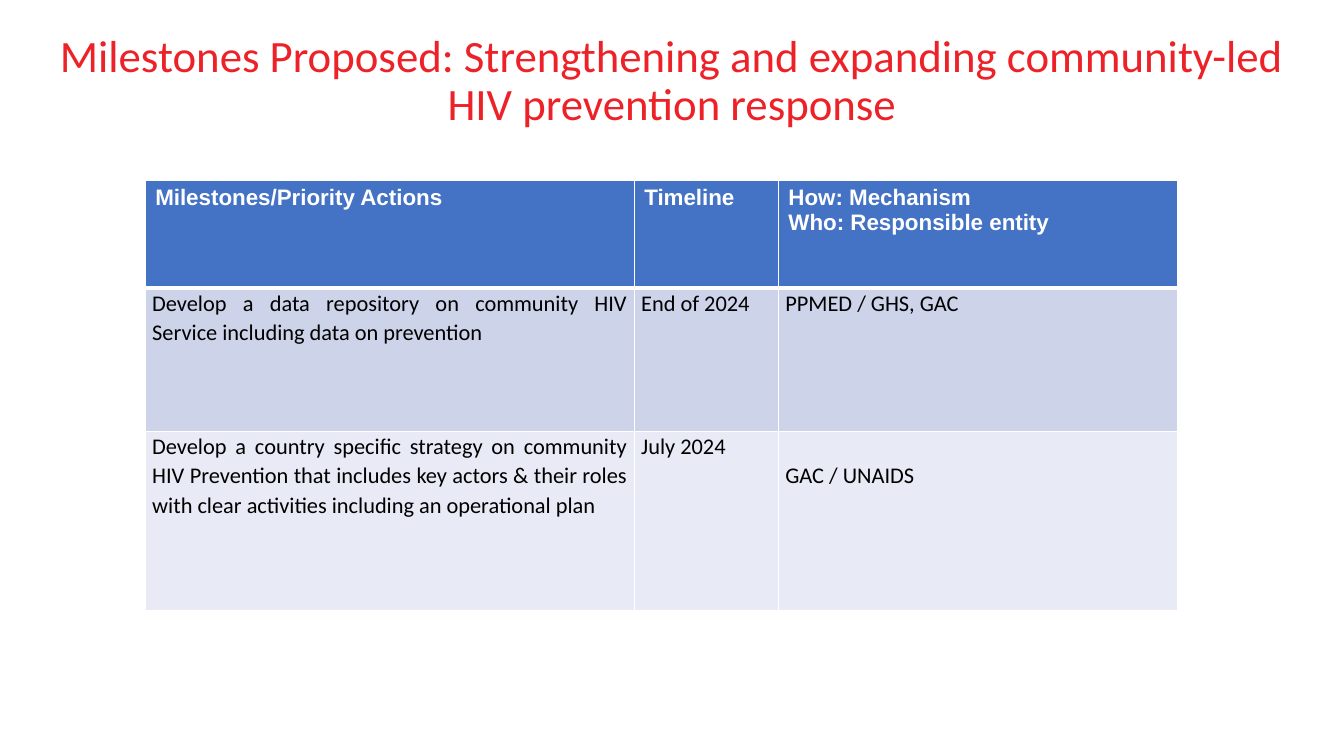
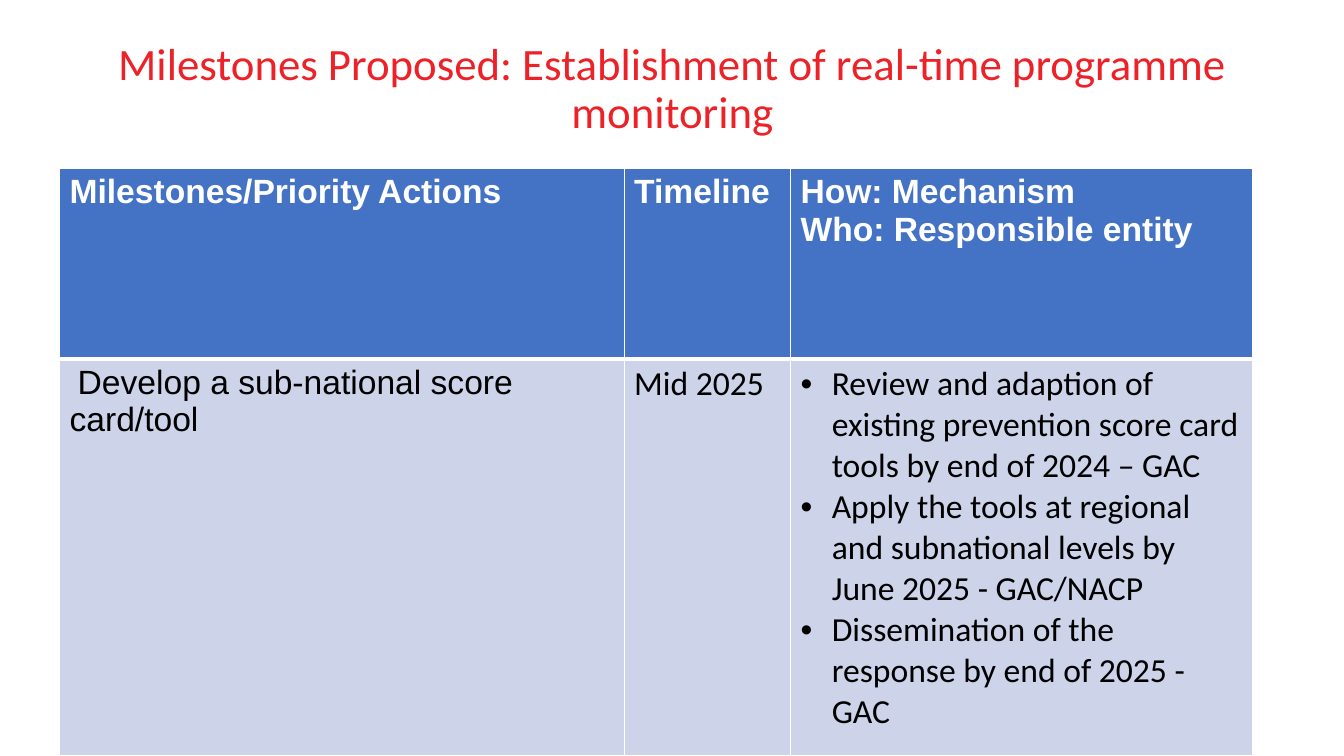
import pptx
import pptx.util
import pptx.dml.color
import pptx.enum.text
import pptx.oxml.ns
from lxml import etree

Inches, Pt = pptx.util.Inches, pptx.util.Pt
ALIGN = pptx.enum.text.PP_ALIGN

COLOURS = {
    "title": "ED2228",
    "header": "4472C4",
    "header_text": "FFFFFF",
    "body_text": "000000",
    "border": "FFFFFF",
    "bands": ["CDD4EA", "E8EBF5"],
}
HEADINGS = [
    ["Milestones/Priority Actions"],
    ["Timeline"],
    ["How: Mechanism", "Who: Responsible entity"],
]
HEADER_MARGINS = (0.1, 0.05)
BULLET_INDENT = 0.31

SLIDES = [
    {
        "title": "Milestones Proposed: Strengthening and expanding "
                 "community-led HIV prevention response",
        "title_box": (0.42, 0.19, 12.49, 1.25),
        "corner": (1.44, 1.79),
        "columns": [4.85, 1.43, 3.96],
        "rows": [1.07, 1.42, 1.78],
        "size": 16,
        "margins": (0.07, 0),
        "body": {"align": ALIGN.JUSTIFY, "spacing": 1.07},
        "milestones": [
            [
                {"lines": ["Develop a data repository on community HIV Service "
                           "including data on prevention"]},
                {"lines": ["End of 2024"]},
                {"lines": ["PPMED / GHS, GAC"]},
            ],
            [
                {"lines": ["Develop a country specific strategy on community HIV "
                           "Prevention that includes key actors & their roles with "
                           "clear activities including an operational plan"]},
                {"lines": ["July 2024"]},
                {"lines": ["GAC / UNAIDS"], "drop": 0.29},
            ],
        ],
    },
    {
        "title": "Milestones Proposed: Establishment of real-time programme monitoring",
        "title_box": (0.92, 0.42, 11.5, 0.94),
        "corner": (0.59, 1.67),
        "columns": [5.6, 1.65, 4.58],
        "rows": [1.89, 3.94],
        "size": 24,
        "margins": HEADER_MARGINS,
        "body": {},
        "milestones": [
            [
                {"lines": ["Develop a sub-national score card/tool"],
                 "font": "Arial", "first_indent": 0.08},
                {"lines": ["Mid 2025"]},
                {"lines": [
                    "Review and adaption of existing prevention score card tools "
                    "by end of 2024 – GAC",
                    "Apply the tools at regional and subnational levels by "
                    "June 2025 - GAC/NACP",
                    "Dissemination of the response by end of 2025 - GAC",
                ], "bullets": True},
            ],
        ],
    },
]


def rgb(colour):
    return pptx.dml.color.RGBColor.from_string(colour)


def add(parent, tag, **attributes):
    return etree.SubElement(parent, pptx.oxml.ns.qn(tag), **attributes)


def set_font(font, name, size, colour, bold=False):
    font.name, font.size, font.bold = name, Pt(size), bold
    font.color.rgb = rgb(colour)


def add_title(slide, text, box):
    title = slide.shapes.title
    title.left, title.top, title.width, title.height = map(Inches, box)
    frame = title.text_frame
    frame.text = text
    frame.word_wrap = True
    frame.auto_size = pptx.enum.text.MSO_AUTO_SIZE.NONE
    frame.vertical_anchor = pptx.enum.text.MSO_ANCHOR.MIDDLE
    paragraph = frame.paragraphs[0]
    paragraph.alignment = ALIGN.CENTER
    paragraph.line_spacing = 0.9
    set_font(paragraph.runs[0].font, "Calibri", 32, COLOURS["title"])


def set_borders(cell, top, bottom):
    properties = cell._tc.get_or_add_tcPr()
    for tag, points in (("a:lnL", 1), ("a:lnR", 1), ("a:lnT", top), ("a:lnB", bottom)):
        line = add(properties, tag, w=str(Pt(points)))
        add(add(line, "a:solidFill"), "a:srgbClr", val=COLOURS["border"])


def indent(paragraph, left, first):
    properties = paragraph._p.get_or_add_pPr()
    properties.set("marL", str(Inches(left)))
    properties.set("indent", str(Inches(first)))
    return properties


def add_bullet(paragraph):
    properties = indent(paragraph, BULLET_INDENT, -BULLET_INDENT)
    add(add(properties, "a:buClr"), "a:srgbClr", val=COLOURS["body_text"])
    add(properties, "a:buFont", typeface="Arial")
    add(properties, "a:buChar", char="•")


def fill_cell(cell, entry, margins, fill, size, colour, bold=False, align=None, spacing=None):
    across, down = margins
    cell.margin_left = cell.margin_right = Inches(across)
    cell.margin_top = Inches(down + entry.get("drop", 0))
    cell.margin_bottom = Inches(down)
    cell.fill.solid()
    cell.fill.fore_color.rgb = rgb(fill)
    cell.text_frame.text = "\n".join(entry["lines"])
    for paragraph in cell.text_frame.paragraphs:
        if align is not None:
            paragraph.alignment = align
        if spacing:
            paragraph.line_spacing = spacing
        if entry.get("bullets"):
            add_bullet(paragraph)
        elif "first_indent" in entry:
            indent(paragraph, 0, entry["first_indent"])
        set_font(paragraph.runs[0].font, entry.get("font", "Calibri"), size, colour, bold)


def add_milestones(slide, content):
    columns, rows = content["columns"], content["rows"]
    left, top = content["corner"]
    table = slide.shapes.add_table(
        len(rows), len(columns),
        *map(Inches, (left, top, sum(columns), sum(rows)))).table
    table.horz_banding = False
    for column, width in zip(table.columns, columns):
        column.width = Inches(width)
    for row, height in zip(table.rows, rows):
        row.height = Inches(height)

    for index, heading in enumerate(HEADINGS):
        cell = table.cell(0, index)
        set_borders(cell, 1, 3)
        fill_cell(cell, {"lines": heading, "font": "Arial"}, HEADER_MARGINS,
                  COLOURS["header"], content["size"], COLOURS["header_text"], bold=True)

    for number, milestone in enumerate(content["milestones"]):
        for index, entry in enumerate(milestone):
            cell = table.cell(number + 1, index)
            set_borders(cell, 1 if number else 3, 1)
            fill_cell(cell, entry, content["margins"], COLOURS["bands"][number % 2],
                      content["size"], COLOURS["body_text"], **content["body"])


def main():
    deck = pptx.Presentation()
    deck.slide_width, deck.slide_height = Inches(13.33), Inches(7.5)
    for content in SLIDES:
        slide = deck.slides.add_slide(deck.slide_layouts[5])
        add_title(slide, content["title"], content["title_box"])
        add_milestones(slide, content)
    deck.save("out.pptx")


if __name__ == "__main__":
    main()
